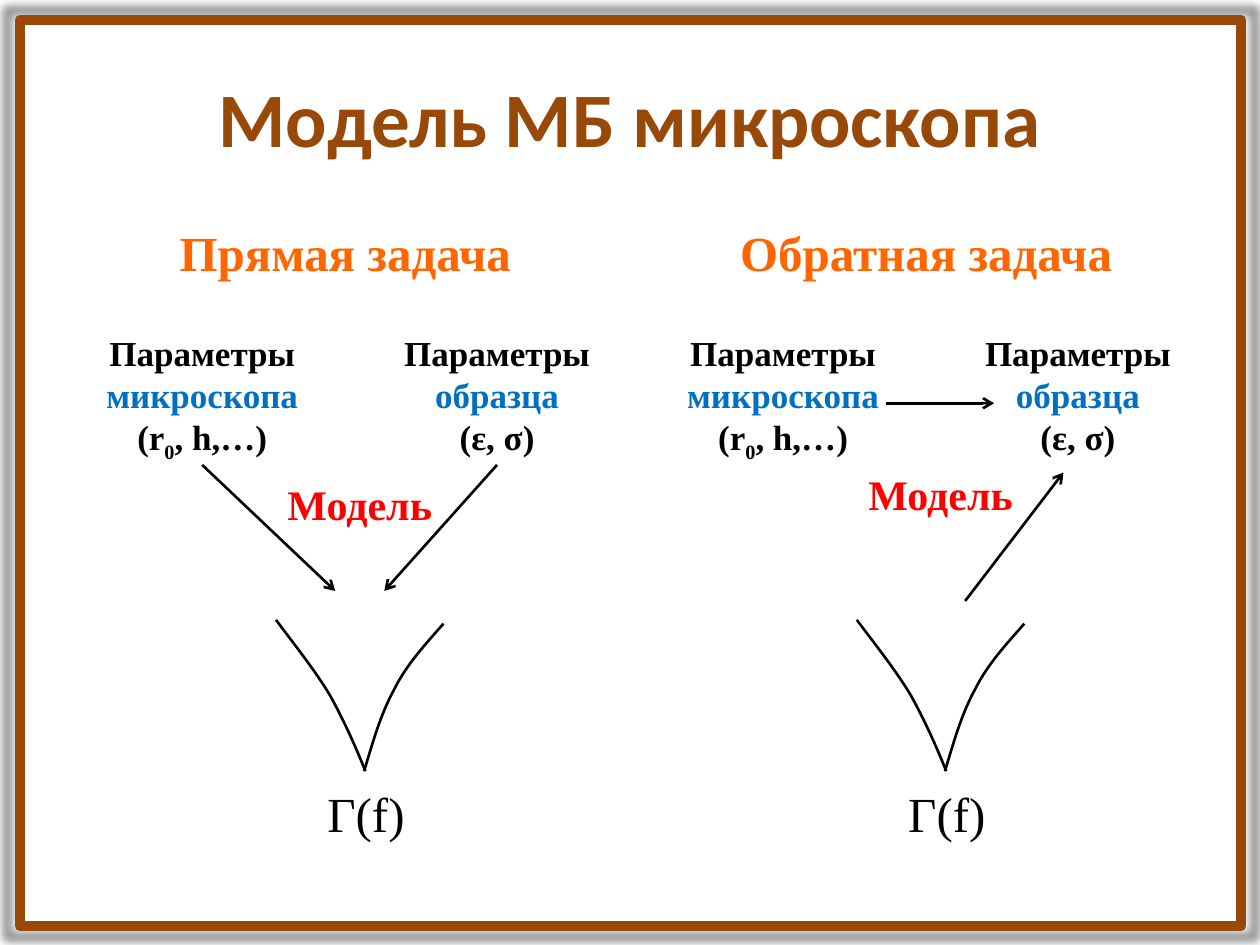
from pptx import Presentation
from pptx.dml.color import RGBColor
from pptx.enum.shapes import MSO_CONNECTOR, MSO_SHAPE
from pptx.enum.text import MSO_ANCHOR, MSO_AUTO_SIZE, PP_ALIGN
from pptx.oxml import parse_xml
from pptx.oxml.ns import nsdecls
from pptx.oxml.xmlchemy import OxmlElement
from pptx.util import Pt

SCALE = 9144  # EMU per px, 100 px to the inch
BLACK, BLUE, RED, ORANGE, BROWN = "000000", "0070C0", "FF0000", "FF6600", "984807"
SERIF = "Times New Roman"
STEP = 461  # from the left scheme to the right one

SHADOW = f"""<a:effectLst {nsdecls("a")}>
  <a:outerShdw blurRad="63500" sx="102000" sy="102000" algn="ctr" rotWithShape="0">
    <a:srgbClr val="000000"><a:alpha val="40000"/></a:srgbClr>
  </a:outerShdw>
</a:effectLst>"""


def px(*nums):
    return [num * SCALE for num in nums]


def paint(color):
    return RGBColor.from_string(color)


def style(font, size, color, bold=True, name=SERIF):
    font.size, font.bold, font.name = Pt(size), bold, name
    font.color.rgb = paint(color)


def stroke(line, color=BLACK, width=1.5):
    line.color.rgb = paint(color)
    line.width = Pt(width)


def add_title(slide, text):
    title = slide.shapes.title
    title.left, title.top, title.width, title.height = px(50, 30, 900, 125)
    frame = title.text_frame
    frame.text = text
    frame.vertical_anchor = MSO_ANCHOR.MIDDLE
    par = frame.paragraphs[0]
    par.alignment = PP_ALIGN.CENTER
    style(par.runs[0].font, 44, BROWN, name="Calibri")


def add_frame(slide):
    rect = slide.shapes.add_shape(MSO_SHAPE.RECTANGLE, *px(16, 16, 969, 719))
    rect.fill.background()
    stroke(rect.line, BROWN, 6)
    rect._element.spPr.append(parse_xml(SHADOW))


def add_text(slide, box, pars, size, bold=True, wrap=True):
    """Each paragraph is a list of (text, color) runs; a run "0" is a subscript."""
    shape = slide.shapes.add_textbox(*px(*box))
    frame = shape.text_frame
    frame.word_wrap = wrap
    frame.auto_size = MSO_AUTO_SIZE.SHAPE_TO_FIT_TEXT
    for i, runs in enumerate(pars):
        par = frame.add_paragraph() if i else frame.paragraphs[0]
        par.alignment = PP_ALIGN.CENTER if wrap else PP_ALIGN.LEFT
        for text, color in runs:
            run = par.add_run()
            run.text = text
            style(run.font, size, color, bold)
            if text == "0":
                run.font._element.set("baseline", "-25000")
    return shape


def add_arrow(slide, start, end, source=None):
    """An arrow that leaves the bottom of source, if one is given."""
    arrow = slide.shapes.add_connector(MSO_CONNECTOR.STRAIGHT, *px(*start, *end))
    if source:
        arrow.begin_connect(source, 2)
    stroke(arrow.line)
    tail = OxmlElement("a:tailEnd")
    tail.set("type", "arrow")
    arrow.line._get_or_add_ln().append(tail)
    arrow._element.spPr.append(OxmlElement("a:effectLst"))


def add_curve(slide, left, points):
    """A Bezier curve: a start point, then three points for each piece."""
    spots = [(left + x, y) for x, y in points]
    form = slide.shapes.build_freeform(*spots[0], scale=SCALE)
    form.add_line_segments(spots[1:], close=False)
    curve = form.convert_to_shape()
    curve.shadow.inherit = False
    curve.fill.background()
    stroke(curve.line)
    lines = curve._element.xpath(".//a:lnTo")
    for i in range(0, len(lines), 3):
        cubic = OxmlElement("a:cubicBezTo")
        lines[i].addprevious(cubic)
        for line in lines[i:i + 3]:
            cubic.append(line[0])
            line.getparent().remove(line)


def add_scheme(slide, left, head, model_top):
    """The parts that both tasks share; gives back the two parameter boxes."""
    add_curve(slide, left, [(290, 612), (282, 592), (273, 572), (262, 552),
                            (250, 532), (234, 512), (219, 492)])
    add_curve(slide, left, [(289, 612), (296, 589), (302, 567), (313, 547),
                            (323, 527), (338, 511), (352, 495)])
    scope = add_text(slide, (left + 55, 258, 211, 111), [
        [("Параметры ", BLACK), ("микроскопа", BLUE)],
        [("(r", BLACK), ("0", BLACK), (", h,…)", BLACK)]], 20)
    sample = add_text(slide, (left + 289, 258, 211, 111), [
        [("Параметры ", BLACK), ("образца", BLUE)],
        [("(ε, σ)", BLACK)]], 20)
    add_text(slide, (left + 180, model_top, 211, 50), [[("Модель", RED)]], 24)
    add_text(slide, (left + 102, 172, 344, 57), [[(head, ORANGE)]], 28)
    add_text(slide, (left + 250, 617, 82, 57), [[("Γ(f)", BLACK)]], 28,
             bold=False, wrap=False)
    return scope, sample


def main():
    deck = Presentation()
    deck.slide_width, deck.slide_height = px(1000, 750)
    slide = deck.slides.add_slide(deck.slide_layouts[5])
    add_title(slide, "Модель МБ микроскопа")
    add_frame(slide)

    scope, sample = add_scheme(slide, 0, "Прямая задача", 375)
    add_arrow(slide, (160, 369), (266, 469), scope)
    add_arrow(slide, (395, 369), (305, 469), sample)

    add_scheme(slide, STEP, "Обратная задача", 367)
    add_arrow(slide, (703, 320), (789, 320))
    add_arrow(slide, (766, 477), (844, 375))
    deck.save("out.pptx")


if __name__ == "__main__":
    main()
